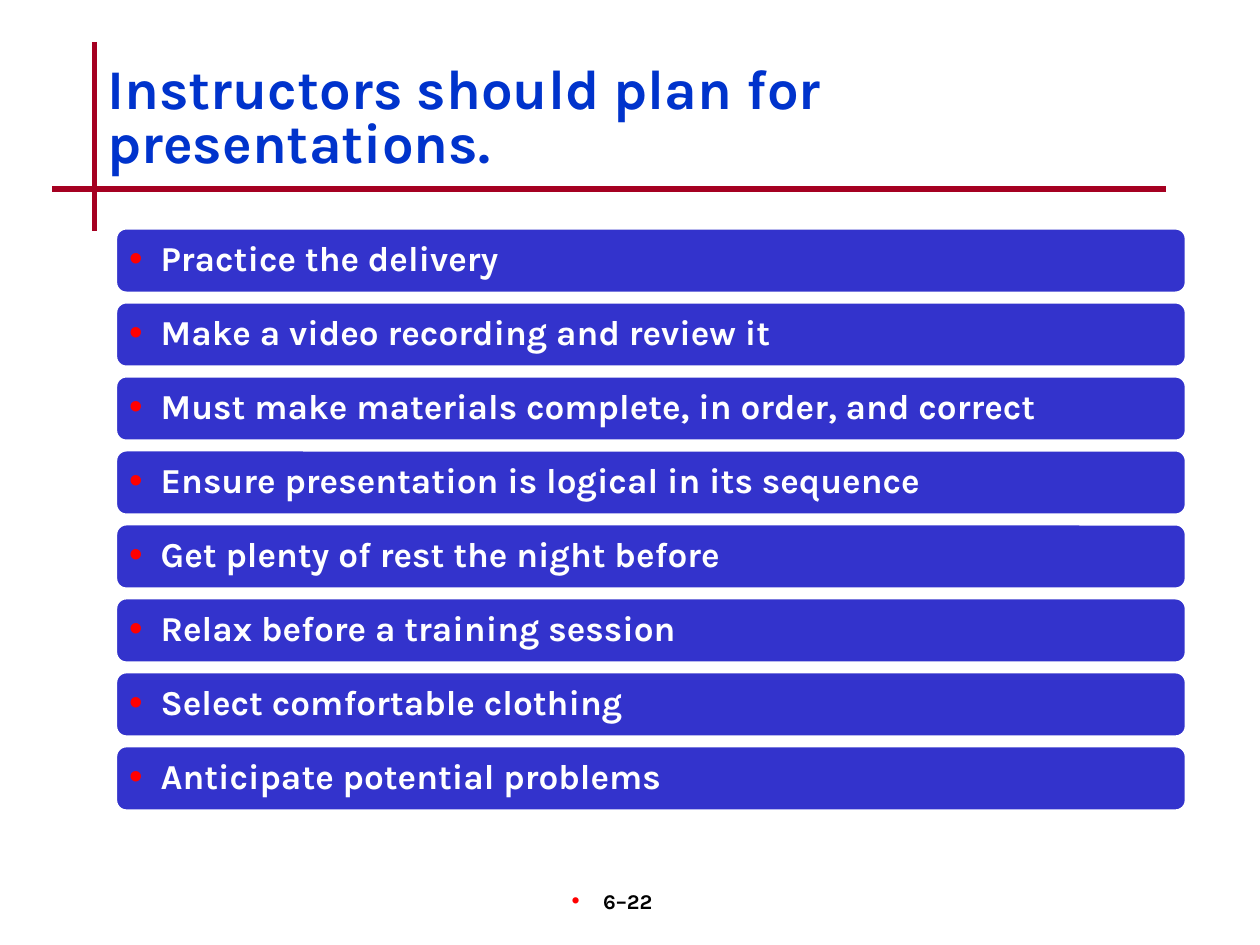
from pptx import Presentation
from pptx.dml.color import RGBColor
from pptx.enum.shapes import MSO_CONNECTOR as CONNECTOR, MSO_SHAPE as SHAPE
from pptx.enum.text import MSO_ANCHOR as ANCHOR, PP_ALIGN as ALIGN
from pptx.oxml.ns import qn
from pptx.util import Pt
from lxml.etree import SubElement

RED = RGBColor(0xFF, 0x00, 0x00)
CRIMSON = RGBColor(0xA5, 0x00, 0x21)
INDIGO = RGBColor(0x33, 0x33, 0xCC)
BLUE = RGBColor(0x00, 0x33, 0xCC)
WHITE = RGBColor(0xFF, 0xFF, 0xFF)
BLACK = RGBColor(0x00, 0x00, 0x00)
BAR_TOP, BAR_PITCH = 130.2, 42.27
ITEMS = [
    "Practice the delivery",
    "Make a video recording and review it",
    "Must make materials complete, in order, and correct",
    "Ensure presentation is logical in its sequence",
    "Get plenty of rest the night before",
    "Relax before a training session",
    "Select comfortable clothing",
    "Anticipate potential problems",
]


def add_bullet(paragraph):
    properties = paragraph._p.get_or_add_pPr()
    properties.set("marL", str(Pt(18)))
    properties.set("indent", str(Pt(-18)))
    color = SubElement(properties, qn("a:buClr"))
    SubElement(color, qn("a:srgbClr"), val=str(RED))
    SubElement(properties, qn("a:buSzPct"), val="110000")
    SubElement(properties, qn("a:buFont"), typeface="Arial")
    SubElement(properties, qn("a:buChar"), char="•")


def set_font(paragraph, size, color):
    font = paragraph.font
    font.name = "Karla"
    font.size = Pt(size)
    font.bold = True
    font.color.rgb = color


presentation = Presentation()
presentation.slide_width, presentation.slide_height = Pt(720), Pt(540)
slide = presentation.slides.add_slide(presentation.slide_layouts[5])

for ends in [(54, 24, 54, 132), (30, 108, 666, 108)]:
    rule = slide.shapes.add_connector(CONNECTOR.STRAIGHT, *map(Pt, ends))
    rule.line.color.rgb = CRIMSON
    rule.line.width = Pt(3)
    SubElement(rule._element.spPr, qn("a:effectLst"))

title = slide.shapes.title
title.left, title.top, title.width, title.height = Pt(54), Pt(24), Pt(612), Pt(90)
title.text_frame.text = "Instructors should plan for presentations."
title.text_frame.vertical_anchor = ANCHOR.MIDDLE
heading = title.text_frame.paragraphs[0]
heading.alignment = ALIGN.LEFT
heading.line_spacing = 0.8
set_font(heading, 32, BLUE)

for index, item in enumerate(ITEMS):
    bar = slide.shapes.add_shape(
        SHAPE.ROUNDED_RECTANGLE, Pt(66), Pt(BAR_TOP + index * BAR_PITCH), Pt(612), Pt(37.4))
    bar.shadow.inherit = False
    bar.fill.solid()
    bar.fill.fore_color.rgb = INDIGO
    bar.line.color.rgb = WHITE
    bar.line.width = Pt(2)
    frame = bar.text_frame
    frame.margin_left = frame.margin_right = Pt(6)
    frame.vertical_anchor = ANCHOR.MIDDLE
    frame.text = item
    paragraph = frame.paragraphs[0]
    paragraph.alignment = ALIGN.LEFT
    paragraph.line_spacing = 0.9
    add_bullet(paragraph)
    set_font(paragraph, 20, WHITE)

page_box = slide.shapes.add_textbox(Pt(282), Pt(504), Pt(150), Pt(36))
page_box.text_frame.word_wrap = True
page_box.text_frame.margin_right = Pt(21.6)
page_box.text_frame.text = "6–22"
page_number = page_box.text_frame.paragraphs[0]
page_number.alignment = ALIGN.CENTER
add_bullet(page_number)
set_font(page_number, 12, BLACK)

presentation.save("out.pptx")
